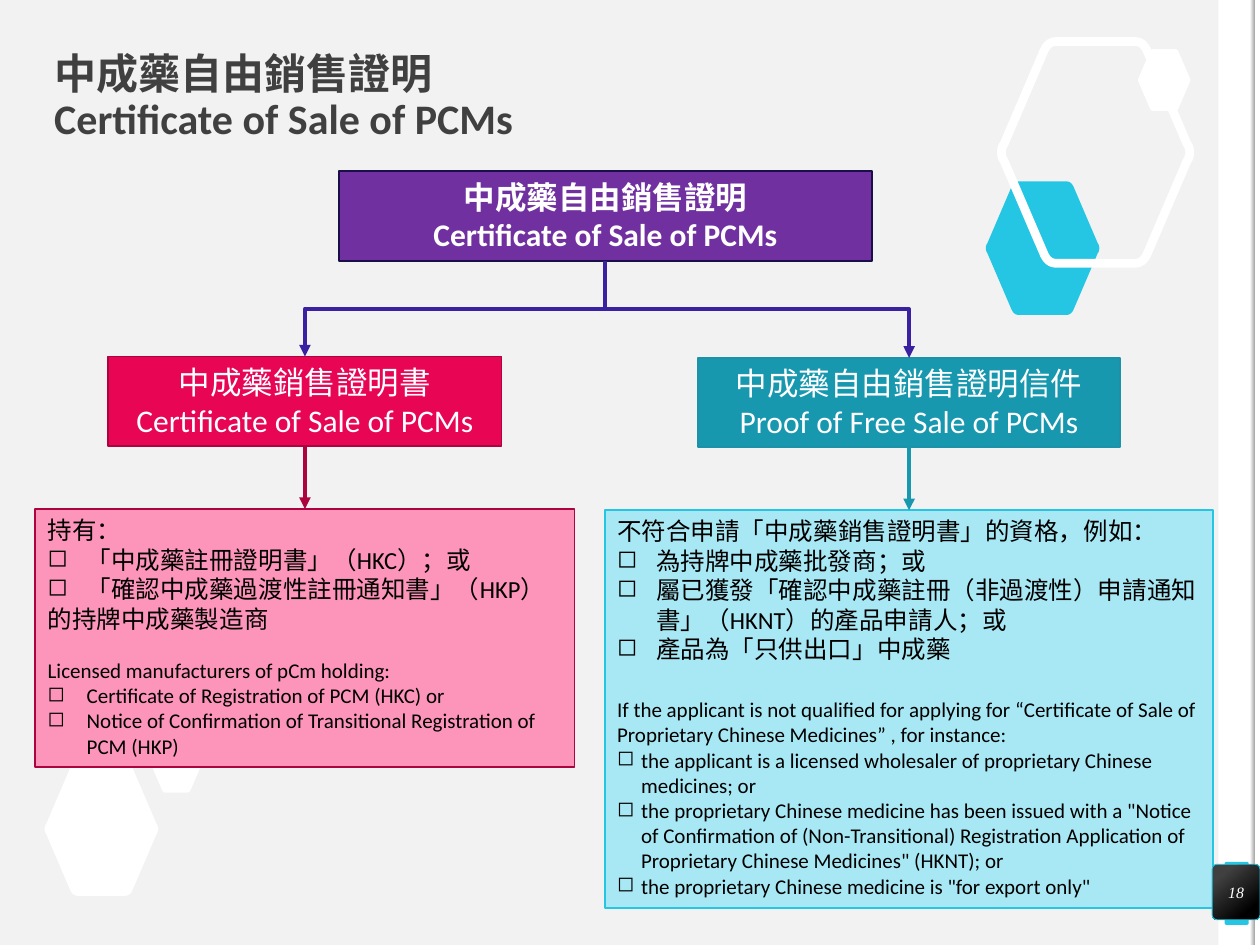
from dataclasses import dataclass

from lxml import etree
from pptx import Presentation
from pptx.dml.color import RGBColor
from pptx.enum.shapes import MSO_CONNECTOR, MSO_SHAPE
from pptx.enum.text import MSO_ANCHOR, MSO_AUTO_SIZE, PP_ALIGN
from pptx.oxml.ns import qn
from pptx.util import Emu, Inches, Pt

RECT, ROUNDED = MSO_SHAPE.RECTANGLE, MSO_SHAPE.ROUNDED_RECTANGLE
STRAIGHT, ELBOW = MSO_CONNECTOR.STRAIGHT, MSO_CONNECTOR.ELBOW
TOP, MIDDLE = MSO_ANCHOR.TOP, MSO_ANCHOR.MIDDLE
LEFT, CENTER = PP_ALIGN.LEFT, PP_ALIGN.CENTER
GROW = MSO_AUTO_SIZE.SHAPE_TO_FIT_TEXT
TOP_SIDE, BOTTOM_SIDE = 0, 2


@dataclass(frozen=True)
class Theme:
    font: str = "Calibri"
    number_font: str = "Times New Roman"
    title_size: float = 24
    heading_size: float = 18
    chinese_size: float = 14
    english_size: float = 12
    number_size: float = 9
    background: str = "F2F2F2"
    white: str = "FFFFFF"
    black: str = "000000"
    dark: str = "404040"
    grey: str = "A6A6A6"
    cyan: str = "25C6E3"
    purple: str = "7030A0"
    purple_edge: str = "1A0F49"
    branch: str = "3921A1"
    pink: str = "E80554"
    pink_edge: str = "AC043E"
    pale_pink: str = "FD94B9"
    teal: str = "1798AF"
    teal_edge: str = "1B92A8"
    pale_cyan: str = "A8E8F4"


THEME = Theme()


@dataclass(frozen=True)
class Box:
    left: float
    top: float
    width: float
    height: float
    fill: str | None = None
    line: str | None = None
    line_width: float = 1


@dataclass(frozen=True)
class Line:
    text: str
    size: float = THEME.chinese_size
    indent: float = 0
    gap: float = 0


def color(value: str) -> RGBColor:
    return RGBColor.from_string(value)


def paint(shape, box: Box) -> None:
    shape.shadow.inherit = False
    for part, value in ((shape.fill, box.fill), (shape.line.fill, box.line)):
        if value:
            part.solid()
            part.fore_color.rgb = color(value)
        else:
            part.background()
    if box.line:
        shape.line.width = Pt(box.line_width)


def add_box(slide, box: Box, kind=RECT, corner: float = 0):
    shape = slide.shapes.add_shape(kind, Inches(box.left), Inches(box.top),
                                   Inches(box.width), Inches(box.height))
    paint(shape, box)
    if corner:
        shape.adjustments[0] = corner
    return shape


def add_gradient(shape, stops: list[tuple[float, str]], angle: float) -> None:
    shape.fill.gradient()
    shape.fill.gradient_angle = angle
    for stop, (position, value) in zip(shape.fill.gradient_stops, stops):
        stop.position = position
        stop.color.rgb = color(value)


def cubic(start, first, second, end, steps: int = 6) -> list[tuple[float, float]]:
    points = []
    for step in range(steps + 1):
        t = step / steps
        weights = ((1 - t) ** 3, 3 * t * (1 - t) ** 2, 3 * t * t * (1 - t), t ** 3)
        points.append(tuple(sum(w * p[axis] for w, p in zip(weights, (start, first, second, end)))
                            for axis in (0, 1)))
    return points


def add_hexagon(slide, box: Box):
    upper = cubic((0.29, 0), (0.26, 0), (0.24, 0.02), (0.23, 0.04))
    side = cubic((0.02, 0.46), (0, 0.48), (0, 0.52), (0.02, 0.54))
    lower = [(x, 1 - y) for x, y in reversed(upper)]
    half = upper + side + lower
    outline = [(Inches(box.left + x * box.width), Inches(box.top + y * box.height))
               for x, y in half + [(1 - x, 1 - y) for x, y in half]]
    builder = slide.shapes.build_freeform(*outline[0], scale=1.0)
    builder.add_line_segments(outline[1:], close=True)
    paint(builder.convert_to_shape(), box)


def add_bullet(paragraph, indent: float) -> None:
    properties = paragraph._p.get_or_add_pPr()
    properties.set("marL", str(Inches(indent)))
    properties.set("indent", str(-Inches(indent)))
    etree.SubElement(properties, qn("a:buChar"), char="◻")


def write(shape, lines: list[Line], *, ink: str, font: str = THEME.font, bold: bool = False,
          italic: bool = False, align=LEFT, anchor=TOP, spacing: float = 1,
          inset: bool = True, grow: bool = True) -> None:
    frame = shape.text_frame
    frame.word_wrap = True
    frame.vertical_anchor = anchor
    if grow:
        frame.auto_size = GROW
    if not inset:
        frame.margin_left = frame.margin_top = frame.margin_right = frame.margin_bottom = 0
    for index, line in enumerate(lines):
        paragraph = frame.add_paragraph() if index else frame.paragraphs[0]
        paragraph.alignment = align
        paragraph.line_spacing = spacing
        paragraph.space_before = Pt(line.gap)
        if line.indent:
            add_bullet(paragraph, line.indent)
        for row, words in enumerate(line.text.split("\n")):
            if row:
                paragraph.add_line_break()
            run = paragraph.add_run()
            run.text = words
            run.font.name, run.font.size = font, Pt(line.size)
            run.font.bold, run.font.italic = bold, italic
            run.font.color.rgb = color(ink)


def add_arrow(slide, source, target, value: str, kind=STRAIGHT) -> None:
    arrow = slide.shapes.add_connector(kind, 0, 0, 0, 0)
    arrow.begin_connect(source, BOTTOM_SIDE)
    arrow.end_connect(target, TOP_SIDE)
    if kind == ELBOW:
        turn_down(arrow)
    arrow.line.color.rgb = color(value)
    arrow.line.width = Pt(2.25)
    etree.SubElement(arrow.line._get_or_add_ln(), qn("a:tailEnd"), type="triangle")
    etree.SubElement(arrow._element.spPr, qn("a:effectLst"))


def turn_down(arrow) -> None:
    across, down = arrow.end_x - arrow.begin_x, arrow.end_y - arrow.begin_y
    middle_x, middle_y = (arrow.begin_x + arrow.end_x) // 2, (arrow.begin_y + arrow.end_y) // 2
    frame = arrow._element.spPr.find(qn("a:xfrm"))
    for flip in ("flipH", "flipV"):
        frame.attrib.pop(flip, None)
    frame.set("rot", str((90 if across < 0 else 270) * 60000))
    if across > 0:
        frame.set("flipH", "1")
    arrow.width, arrow.height = Emu(down), Emu(abs(across))
    arrow.left, arrow.top = Emu(middle_x - down // 2), Emu(middle_y - abs(across) // 2)


def add_backdrop(slide) -> None:
    slide.background.fill.solid()
    slide.background.fill.fore_color.rgb = color(THEME.background)
    add_box(slide, Box(9.67, 0, 0.29, 7.5, THEME.white))
    add_box(slide, Box(9.72, 6.84, 0.19, 0.5, THEME.cyan), ROUNDED, 0.07)
    add_box(slide, Box(9.96, 0, 0.04, 7.5, THEME.white))
    edge = add_box(slide, Box(9.92, 0, 0.04, 7.5))
    add_gradient(edge, [(0, THEME.white), (1, THEME.grey)], 0)
    for hexagon in (Box(0.35, 6.05, 0.91, 1.06, THEME.white),
                    Box(7.82, 1.44, 0.91, 1.06, THEME.cyan),
                    Box(7.94, 0.33, 1.51, 1.76, None, THEME.white, 5),
                    Box(1.19, 5.8, 0.42, 0.49, THEME.white),
                    Box(9.03, 0.39, 0.42, 0.49, THEME.white)):
        add_hexagon(slide, hexagon)


def add_heading(slide, box: Box, texts: list[str], bold: bool = False):
    heading = add_box(slide, box)
    write(heading, [Line(text, THEME.heading_size) for text in texts],
          ink=THEME.white, bold=bold, align=CENTER)
    return heading


def add_details(slide, box: Box, lines: list[Line]):
    details = add_box(slide, box)
    write(details, lines, ink=THEME.black)
    return details


def main() -> None:
    deck = Presentation()
    deck.slide_width, deck.slide_height = Inches(10), Inches(7.5)
    slide = deck.slides.add_slide(deck.slide_layouts[6])
    add_backdrop(slide)

    subject = "中成藥自由銷售證明\nCertificate of Sale of PCMs"
    title = slide.shapes.add_textbox(Inches(0.43), Inches(0.17), Inches(9.29), Inches(1.22))
    write(title, [Line(subject, THEME.title_size)], ink=THEME.dark, bold=True,
          anchor=MIDDLE, spacing=0.9, inset=False, grow=False)

    root = add_heading(slide, Box(2.69, 1.36, 4.23, 0.71, THEME.purple, THEME.purple_edge),
                       [subject], bold=True)
    certificate = add_heading(slide, Box(0.86, 2.83, 3.12, 0.71, THEME.pink, THEME.pink_edge),
                              ["中成藥銷售證明書", "Certificate of Sale of PCMs"])
    proof = add_heading(slide, Box(5.54, 2.84, 3.35, 0.71, THEME.teal, THEME.teal_edge),
                        ["中成藥自由銷售證明信件", "Proof of Free Sale of PCMs"])

    english, wide, narrow = THEME.english_size, 0.31, 0.19
    holders = add_details(slide, Box(0.28, 4.04, 4.28, 2.05, THEME.pale_pink, THEME.pink_edge), [
        Line("持有："),
        Line("「中成藥註冊證明書」（HKC）；或", indent=wide),
        Line("「確認中成藥過渡性註冊通知書」（HKP）", indent=wide),
        Line("的持牌中成藥製造商"),
        Line("Licensed manufacturers of pCm holding:", english, gap=14),
        Line("Certificate of Registration of PCM (HKC) or", english, wide),
        Line("Notice of Confirmation of Transitional Registration of PCM (HKP)", english, wide),
    ])
    others = add_details(slide, Box(4.8, 4.05, 4.83, 3.16, THEME.pale_cyan, THEME.cyan), [
        Line("不符合申請「中成藥銷售證明書」的資格，例如："),
        Line("為持牌中成藥批發商；或", indent=wide),
        Line("屬已獲發「確認中成藥註冊（非過渡性）申請通知書」（HKNT）的產品申請人；或", indent=wide),
        Line("產品為「只供出口」中成藥", indent=wide),
        Line("If the applicant is not qualified for applying for “Certificate of Sale of "
             "Proprietary Chinese Medicines” , for instance:", english, gap=19),
        Line("the applicant is a licensed wholesaler of proprietary Chinese medicines; or",
             english, narrow),
        Line('the proprietary Chinese medicine has been issued with a "Notice of Confirmation of '
             '(Non-Transitional) Registration Application of Proprietary Chinese Medicines" '
             '(HKNT); or', english, narrow),
        Line('the proprietary Chinese medicine is "for export only"', english, narrow),
    ])

    add_arrow(slide, root, certificate, THEME.branch, ELBOW)
    add_arrow(slide, root, proof, THEME.branch, ELBOW)
    add_arrow(slide, certificate, holders, THEME.pink_edge)
    add_arrow(slide, proof, others, THEME.teal)

    badge = add_box(slide, Box(9.62, 6.86, 0.38, 0.44, None, THEME.cyan, 0.5), ROUNDED, 0.1)
    add_gradient(badge, [(0.2, THEME.dark), (0.82, THEME.black)], 310)
    write(badge, [Line("18", THEME.number_size)], ink=THEME.white, font=THEME.number_font,
          italic=True, align=CENTER, anchor=MIDDLE, inset=False, grow=False)

    deck.save("out.pptx")


if __name__ == "__main__":
    main()
